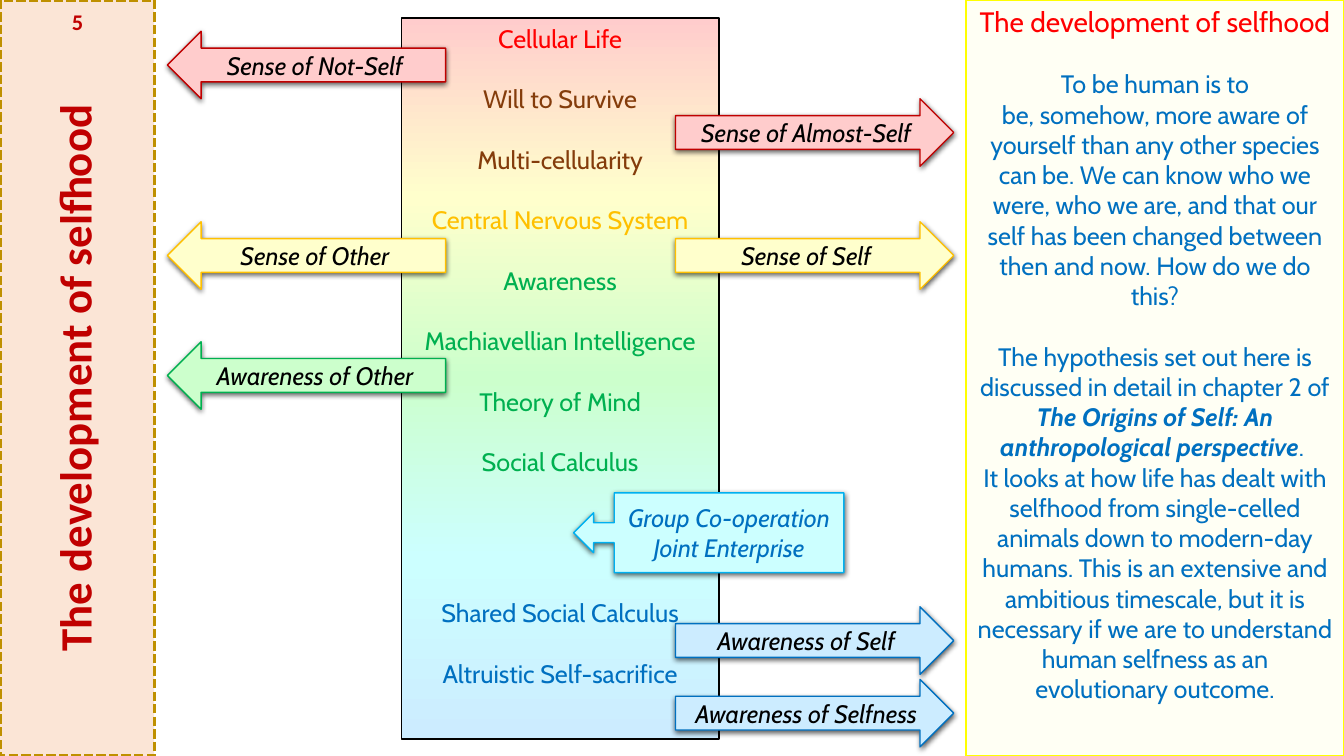
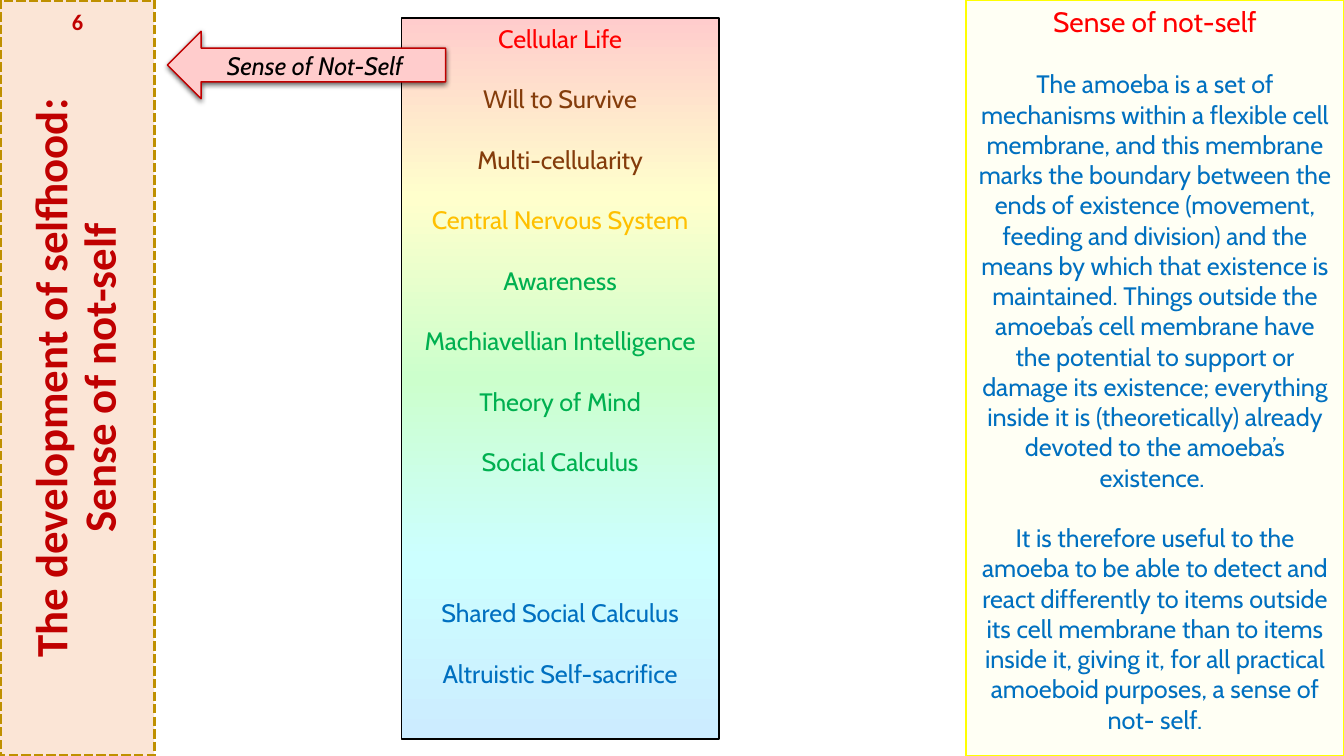
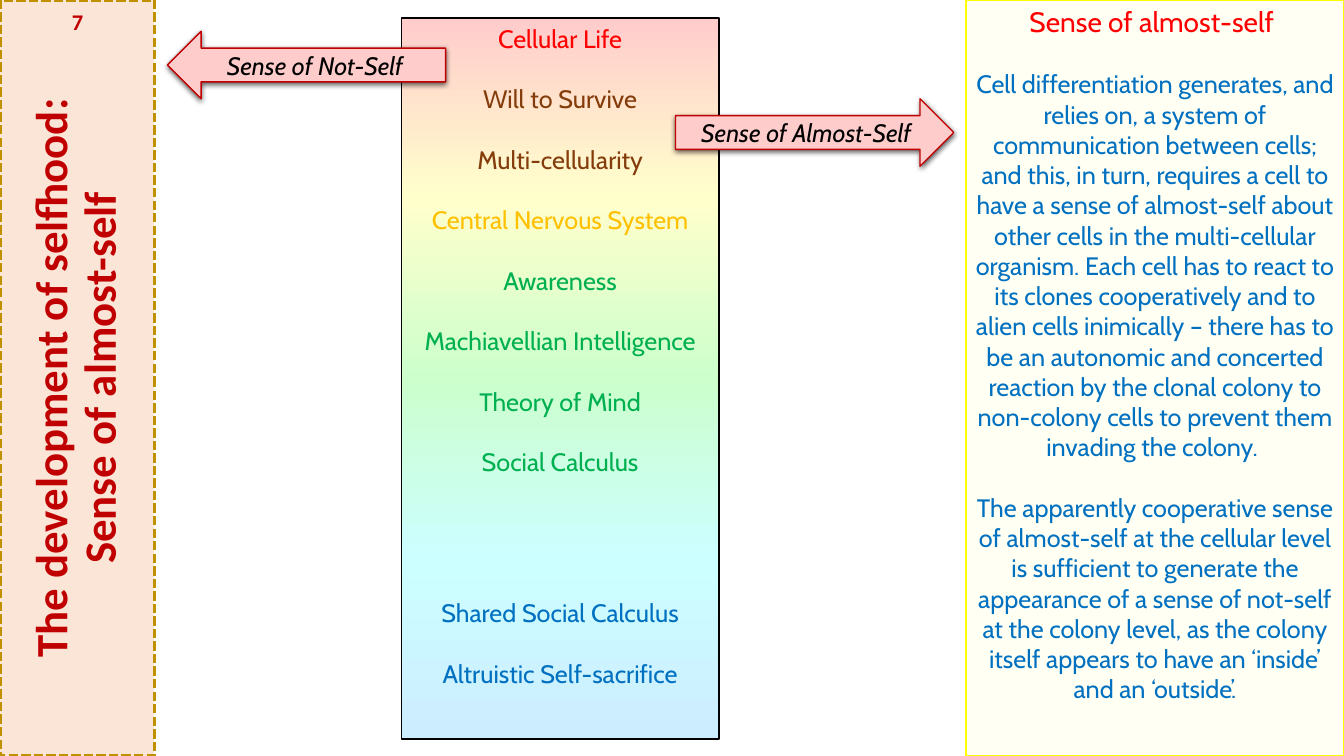
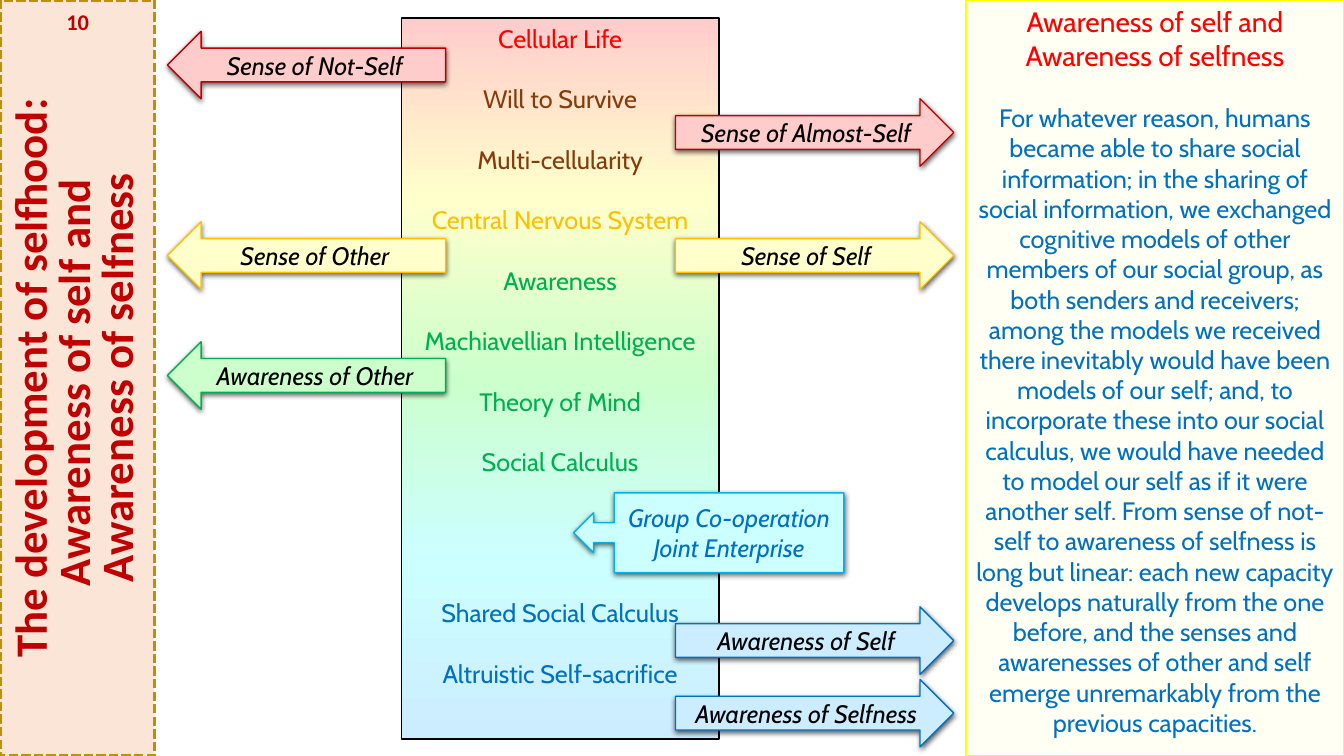
from lxml import etree
from pptx import Presentation
from pptx.dml.color import RGBColor
from pptx.enum.dml import MSO_LINE
from pptx.enum.shapes import MSO_SHAPE
from pptx.enum.text import MSO_ANCHOR, MSO_AUTO_SIZE, PP_ALIGN
from pptx.oxml.ns import qn
from pptx.util import Inches, Pt

RECT = MSO_SHAPE.RECTANGLE
LEFT_ARROW, RIGHT_ARROW = MSO_SHAPE.LEFT_ARROW, MSO_SHAPE.RIGHT_ARROW
CALLOUT = MSO_SHAPE.LEFT_ARROW_CALLOUT
TOP, MIDDLE = MSO_ANCHOR.TOP, MSO_ANCHOR.MIDDLE
CENTER = PP_ALIGN.CENTER
NO_FIT = MSO_AUTO_SIZE.NONE
DASHED = MSO_LINE.SQUARE_DOT
TITLE_ONLY = 5

BODY_FONT, TITLE_FONT = "Cabin", "Calibri"
BLACK, RED, DARK_RED, BROWN = "000000", "FF0000", "C00000", "843C0B"
GOLD, GREEN, BLUE, CYAN = "FFC000", "00B050", "0070C0", "00B0F0"
PINK, CREAM, MINT, AQUA, SKY = "FFCCCC", "FFFFCC", "CCFFCC", "CCFFFF", "CCECFF"
BAND, BAND_EDGE = "FBE5D6", "BF9000"
PANEL, PANEL_EDGE = "FFFF99", "FFFF00"
BAND_WIDTH, SLIDE_HEIGHT = 1.53, 7.5
GAP = 21.6  # height in points of one 18 pt line

STAGES = [  # text, colour, lines of space before
    ("Cellular Life", RED, 0),
    ("Will to Survive", BROWN, 1),
    ("Multi-cellularity", BROWN, 1),
    ("Central Nervous System", GOLD, 1),
    ("Awareness", GREEN, 1),
    ("Machiavellian Intelligence", GREEN, 1),
    ("Theory of Mind", GREEN, 1),
    ("Social Calculus", GREEN, 1),
    ("Shared Social Calculus", BLUE, 4),
    ("Altruistic Self-sacrifice", BLUE, 1),
]

ARROWS = [  # text, direction, top, fill, line; in order of appearance
    ("Sense of Not-Self", LEFT_ARROW, 0.31, PINK, DARK_RED),
    ("Sense of Almost-Self", RIGHT_ARROW, 0.98, PINK, DARK_RED),
    ("Sense of Other", LEFT_ARROW, 2.2, CREAM, GOLD),
    ("Sense of Self", RIGHT_ARROW, 2.2, CREAM, GOLD),
    ("Awareness of Other", LEFT_ARROW, 3.39, MINT, GREEN),
    ("Awareness of Self", RIGHT_ARROW, 6.02, SKY, BLUE),
    ("Awareness of Selfness", RIGHT_ARROW, 6.74, SKY, BLUE),
]

SLIDES = [  # each body is a list of blocks, each block a list of paragraphs
    dict(
        number=5, title=["The development of selfhood"], arrows=len(ARROWS),
        heading=["The development of selfhood"],
        body=[
            ["To be human is to",
             "be, somehow, more aware of yourself than any other species can be. "
             "We can know who we were, who we are, and that our self has been "
             "changed between then and now. How do we do this?"],
            ["The hypothesis set out here is discussed in detail in chapter 2 of",
             ("The Origins of Self: An anthropological perspective", ". "),
             "It looks at how life has dealt with selfhood from single-celled "
             "animals down to modern-day humans. This is an extensive and "
             "ambitious timescale, but it is necessary if we are to understand "
             "human selfness as an evolutionary outcome."],
        ]),
    dict(
        number=6, title=["The development of selfhood:", "Sense of not-self"],
        arrows=1, heading=["Sense of not-self"],
        body=[
            ["The amoeba is a set of mechanisms within a flexible cell membrane, "
             "and this membrane marks the boundary between the ends of existence "
             "(movement, feeding and division) and the means by which that "
             "existence is maintained. Things outside the amoeba’s cell membrane "
             "have the potential to support or damage its existence; everything "
             "inside it is (theoretically) already devoted to the amoeba’s "
             "existence. "],
            ["It is therefore useful to the amoeba to be able to detect and react "
             "differently to items outside its cell membrane than to items inside "
             "it, giving it, for all practical amoeboid purposes, a sense of "
             "not- self."],
        ]),
    dict(
        number=7, title=["The development of selfhood:", "Sense of almost-self"],
        arrows=2, heading=["Sense of almost-self "],
        body=[
            ["Cell differentiation generates, and relies on, a system of "
             "communication between cells; and this, in turn, requires a cell to "
             "have a sense of almost-self about other cells in the multi-cellular "
             "organism. Each cell has to react to its clones cooperatively and to "
             "alien cells inimically – there has to be an autonomic and concerted "
             "reaction by the clonal colony to non-colony cells to prevent them "
             "invading the colony. "],
            ["The apparently cooperative sense of almost-self at the cellular "
             "level is sufficient to generate the appearance of a sense of "
             "not-self at the colony level, as the colony itself appears to have "
             "an ‘inside’ and an ‘outside’."],
        ]),
    dict(
        number=10, arrows=len(ARROWS), spacing=0.8,
        title=["The development of selfhood:", "Awareness of self and ",
               "Awareness of selfness"],
        heading=["Awareness of self and", "Awareness of selfness"],
        body=[
            ["For whatever reason, humans",
             "became able to share social information; in the sharing of social "
             "information, we exchanged cognitive models of other members of our "
             "social group, as both senders and receivers; among the models we "
             "received there inevitably would have been models of our self; and, "
             "to incorporate these into our social calculus, we would have needed "
             "to model our self as if it were another self. From sense of not- "
             "self to awareness of selfness is long but linear: each new capacity "
             "develops naturally from the one before, and the senses and "
             "awarenesses of other and self emerge unremarkably from the previous "
             "capacities."],
        ]),
]


def rgb(color):
    return RGBColor.from_string(color)


def sub(parent, tag, **attrs):
    """Append a DrawingML child element and return it."""
    return etree.SubElement(parent, qn(tag), {k: str(v) for k, v in attrs.items()})


def put_text(tf, text, p=None, size=18, font=BODY_FONT, color=BLACK,
             bold=False, italic=False, before=0, spacing=None):
    """Write text as a new centred paragraph, or as a further run of p."""
    if p is None:
        p = tf.paragraphs[0]
        if p.runs:
            p = tf.add_paragraph()
        p.alignment = CENTER
        p.space_before = Pt(before)
        p.line_spacing = spacing
    r = p.add_run()
    r.text = text
    r.font.size, r.font.name = Pt(size), font
    r.font.bold, r.font.italic = bold, italic
    r.font.color.rgb = rgb(color)
    return p


class Deck:
    def __init__(self):
        self.prs = Presentation()
        self.prs.slide_width = Inches(13.33)
        self.prs.slide_height = Inches(SLIDE_HEIGHT)
        self.s = None

    def new_slide(self):
        self.s = self.prs.slides.add_slide(self.prs.slide_layouts[TITLE_ONLY])

    def paint(self, sp, fill, line, width=1):
        sp.fill.solid()
        sp.fill.fore_color.rgb = rgb(fill)
        sp.line.color.rgb = rgb(line)
        sp.line.width = Pt(width)

    def shape(self, kind, x, y, w, h, fill, line, anchor=MIDDLE):
        sp = self.s.shapes.add_shape(kind, Inches(x), Inches(y), Inches(w), Inches(h))
        sp.shadow.inherit = False
        self.paint(sp, fill, line)
        sp.text_frame.word_wrap = True
        sp.text_frame.vertical_anchor = anchor
        return sp

    def raised(self, *args):
        """Add a shape with a soft shadow below it."""
        sp = self.shape(*args)
        effects = sp._element.spPr.find(qn("a:effectLst"))
        shadow = sub(effects, "a:outerShdw", blurRad=Pt(4), dist=Pt(1.5),
                     dir=5400000, algn="t", rotWithShape=0)
        sub(sub(shadow, "a:srgbClr", val=BLACK), "a:alpha", val=63000)
        return sp

    def title_band(self, lines, spacing):
        """Turn the title a quarter left so that it fills the left edge."""
        sp = self.s.shapes.title
        shift = (SLIDE_HEIGHT - BAND_WIDTH) / 2
        sp.left, sp.top = Inches(-shift), Inches(shift)
        sp.width, sp.height = Inches(SLIDE_HEIGHT), Inches(BAND_WIDTH)
        sp.rotation = 270
        self.paint(sp, BAND, BAND_EDGE, 2.25)
        sp.line.dash_style = DASHED
        tf = sp.text_frame
        tf.word_wrap, tf.auto_size, tf.vertical_anchor = True, NO_FIT, MIDDLE
        for line in lines:
            put_text(tf, line, size=32, font=TITLE_FONT, color=DARK_RED,
                     bold=True, spacing=spacing)

    def page_number(self, number):
        sp = self.s.shapes.add_textbox(Inches(0.44), Inches(0.03),
                                       Inches(0.66), Inches(0.37))
        sp.text_frame.word_wrap = True
        put_text(sp.text_frame, str(number), size=16, font=TITLE_FONT,
                 color=DARK_RED, bold=True)

    def stage_column(self):
        sp = self.shape(RECT, 3.98, 0.18, 3.15, 7.15, PINK, BLACK, TOP)
        sp.fill.gradient()
        sp.fill.gradient_angle = 270
        stops = sp._element.spPr.find(".//" + qn("a:gsLst"))
        for stop in list(stops):
            stops.remove(stop)
        for i, color in enumerate([PINK, CREAM, MINT, AQUA, SKY]):
            sub(sub(stops, "a:gs", pos=i * 25000), "a:srgbClr", val=color)
        for text, color, gaps in STAGES:
            put_text(sp.text_frame, text, color=color, before=gaps * GAP)

    def arrow(self, text, kind, top, fill, line):
        left = 1.66 if kind == LEFT_ARROW else 6.7
        sp = self.raised(kind, left, top, 2.76, 0.67, fill, line)
        put_text(sp.text_frame, text, italic=True)

    def callout(self, lines):
        sp = self.raised(CALLOUT, 5.69, 4.89, 2.68, 0.79, AQUA, CYAN)
        for i, value in enumerate([0.25, 0.25, 0.25, 0.85]):
            sp.adjustments[i] = value
        for line in lines:
            put_text(sp.text_frame, line, color=BLUE, italic=True)

    def side_panel(self, heading, body):
        sp = self.shape(RECT, 9.58, 0, 3.75, SLIDE_HEIGHT, PANEL, PANEL_EDGE, TOP)
        fill_color = sp._element.spPr.find(qn("a:solidFill")).find(qn("a:srgbClr"))
        sub(fill_color, "a:alpha", val=10000)
        tf = sp.text_frame
        for line in heading:
            put_text(tf, line, size=20, color=RED)
        for block in body:
            for i, para in enumerate(block):
                before = 0 if i else GAP
                if isinstance(para, tuple):
                    book, rest = para
                    p = put_text(tf, book, color=BLUE, bold=True, italic=True,
                                 before=before)
                    put_text(tf, rest, p=p, color=BLUE)
                else:
                    put_text(tf, para, color=BLUE, before=before)


def main():
    deck = Deck()
    for page in SLIDES:
        deck.new_slide()
        deck.title_band(page["title"], page.get("spacing", 0.9))
        deck.stage_column()
        if page["arrows"] == len(ARROWS):
            deck.callout(["Group Co-operation", "Joint Enterprise"])
        for arrow in ARROWS[:page["arrows"]]:
            deck.arrow(*arrow)
        deck.side_panel(page["heading"], page["body"])
        deck.page_number(page["number"])
    deck.prs.save("out.pptx")


if __name__ == "__main__":
    main()
